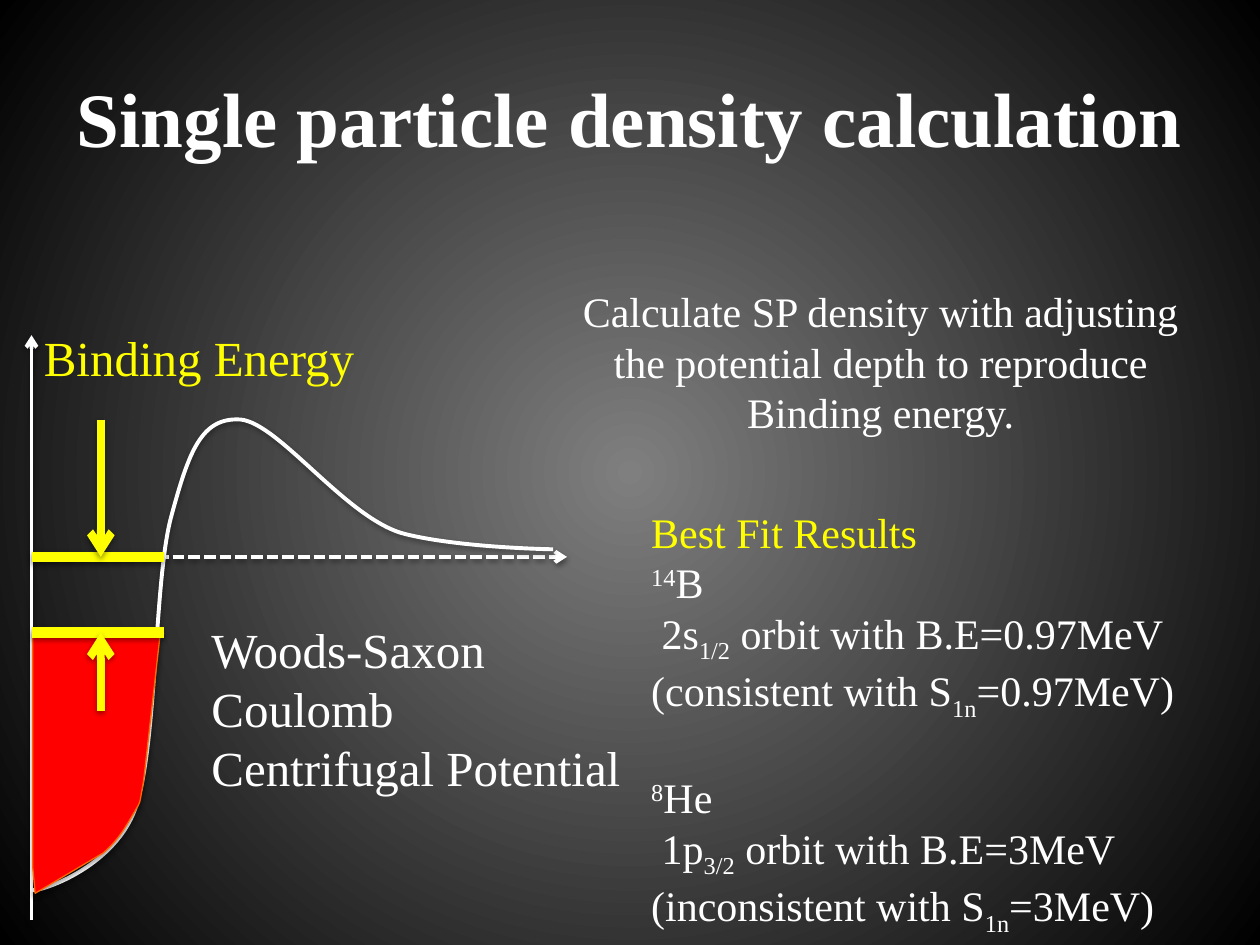
from dataclasses import dataclass

from lxml import etree
from pptx import Presentation
from pptx.dml.color import RGBColor
from pptx.enum.dml import MSO_LINE_DASH_STYLE as Dash
from pptx.enum.shapes import MSO_CONNECTOR as Connector
from pptx.enum.text import MSO_ANCHOR as Anchor, PP_ALIGN as Align
from pptx.oxml import parse_xml
from pptx.oxml.ns import nsdecls, qn
from pptx.util import Inches, Pt

COLORS = {"white": "FFFFFF", "yellow": "FFFF00", "red": "FF0000",
          "orange": "FF6600", "black": "000000", "gray": "7F7F7F"}
FONT = "Times New Roman"
SUPER, SUB = 30, -25
AXIS_X, ZERO_Y, LEVEL_Y, WELL_EDGE, ARROW_X = 0.25, 4.42, 5.02, 1.3, 0.8
Point = tuple[float, float]
Segment = tuple[Point, ...]  # one point: straight; three points: cubic curve


@dataclass
class Stroke:
    start: Point
    end: Point
    color: str
    width: float
    arrow: bool = False
    dashed: bool = False


@dataclass
class Outline:
    start: Point
    segments: list[Segment]
    color: str
    width: float
    fill: str = ""


@dataclass
class Line:
    runs: list[tuple[str, int]]  # text and baseline shift in percent
    color: str = "white"
    space_before: float = 0


@dataclass
class Label:
    box: tuple[float, float, float, float]
    lines: list[Line]
    size: float
    align: Align = Align.LEFT
    bold: bool = False
    anchor: Anchor = Anchor.TOP


def rgb(name: str) -> RGBColor:
    return RGBColor.from_string(COLORS[name])


def plain(*texts: str, color: str = "white") -> list[Line]:
    return [Line([(text, 0)], color) for text in texts]


def set_background(slide) -> None:
    """Radial gradient, light in the middle."""
    fill = slide.background.fill
    fill.gradient()
    for stop, name in zip(fill.gradient_stops, ("gray", "black")):
        stop.color.rgb = rgb(name)
    gradient = slide.background._cSld.find(".//" + qn("a:gradFill"))
    gradient.replace(gradient.find(qn("a:lin")), parse_xml(
        f'<a:path {nsdecls("a")} path="circle">'
        '<a:fillToRect l="50000" t="50000" r="50000" b="50000"/></a:path>'))


def add_shadow(shape, alpha: int = 38, distance: float = 1.6) -> None:
    shape._element.spPr.append(parse_xml(
        f'<a:effectLst {nsdecls("a")}><a:outerShdw blurRad="{Pt(3.1)}" '
        f'dist="{Pt(distance)}" dir="5400000" rotWithShape="0">'
        f'<a:srgbClr val="{COLORS["black"]}"><a:alpha val="{alpha * 1000}"/>'
        '</a:srgbClr></a:outerShdw></a:effectLst>'))


def add_stroke(slide, stroke: Stroke) -> None:
    ends = [Inches(value) for value in (*stroke.start, *stroke.end)]
    connector = slide.shapes.add_connector(Connector.STRAIGHT, *ends)
    line = connector.line
    line.color.rgb = rgb(stroke.color)
    line.width = Pt(stroke.width)
    if stroke.dashed:
        line.dash_style = Dash.SQUARE_DOT
    if stroke.arrow:
        etree.SubElement(line._get_or_add_ln(), qn("a:tailEnd"), type="arrow")
    add_shadow(connector)


def bend_segments(shape, segments: list[Segment]) -> None:
    """Turn the straight segments that have control points into curves."""
    straight = list(shape._element.iter(qn("a:lnTo")))
    for element, segment in zip(straight, segments):
        if len(segment) == 3:
            element.tag = qn("a:cubicBezTo")
            for position, (x, y) in enumerate(segment[:2]):
                control = etree.Element(qn("a:pt"),
                                        x=str(Inches(x) - shape.left),
                                        y=str(Inches(y) - shape.top))
                element.insert(position, control)


def add_outline(slide, outline: Outline):
    x, y = outline.start
    builder = slide.shapes.build_freeform(Inches(x), Inches(y))
    builder.add_line_segments(
        [(Inches(x), Inches(y)) for *_, (x, y) in outline.segments],
        close=bool(outline.fill))
    shape = builder.convert_to_shape()
    bend_segments(shape, outline.segments)
    if outline.fill:
        shape.fill.solid()
        shape.fill.fore_color.rgb = rgb(outline.fill)
    else:
        shape.fill.background()
    shape.line.color.rgb = rgb(outline.color)
    shape.line.width = Pt(outline.width)
    return shape


def add_label(slide, label: Label) -> None:
    shape = slide.shapes.add_textbox(*(Inches(value) for value in label.box))
    frame = shape.text_frame
    frame.word_wrap = False
    frame.vertical_anchor = label.anchor
    for index, line in enumerate(label.lines):
        paragraph = frame.add_paragraph() if index else frame.paragraphs[0]
        paragraph.alignment = label.align
        paragraph.space_before = Pt(line.space_before)
        for text, baseline in line.runs:
            run = paragraph.add_run()
            run.text = text
            run.font.name = FONT
            run.font.size = Pt(label.size)
            run.font.bold = label.bold
            run.font.color.rgb = rgb(line.color)
            if baseline:
                run.font._element.set("baseline", str(baseline * 1000))


def nucleus(mass: str, symbol: str, shell: str, spin: str, energy: str,
            verdict: str, gap: float = 0) -> list[Line]:
    return [
        Line([(mass, SUPER), (symbol, 0)], space_before=gap),
        Line([(f" {shell}", 0), (spin, SUB), (f" orbit with B.E={energy}", 0)]),
        Line([(f"({verdict} with S", 0), ("1n", SUB), (f"={energy})", 0)]),
    ]


AXES = [
    Stroke((AXIS_X, ZERO_Y), (4.5, ZERO_Y), "white", 2.25, arrow=True, dashed=True),
    Stroke((AXIS_X, 7.3), (AXIS_X, 2.66), "white", 2.25, arrow=True),
]
LEVELS = [Stroke((AXIS_X, y), (WELL_EDGE, y), "yellow", 6)
          for y in (LEVEL_Y, ZERO_Y)]
ENERGY_ARROWS = [Stroke((ARROW_X, start), (ARROW_X, end), "yellow", 4.5, arrow=True)
                 for start, end in ((5.64, LEVEL_Y), (3.33, ZERO_Y))]

POTENTIAL = Outline((0.26, 7.06), [
    ((0.23, 7.1), (0.88, 6.93), (1.07, 6.43)),
    ((1.25, 5.94), (1.22, 4.61), (1.36, 4.1)),
    ((1.5, 3.58), (1.6, 3.31), (1.91, 3.33)),
    ((2.22, 3.36), (2.76, 4.13), (3.22, 4.24)),
    ((3.67, 4.35), (4.39, 4.36), (4.39, 4.36))], "white", 2.25)
WELL = Outline((0.82, 6.77), [
    ((0.28, 7.09),), ((0.26, 6.88),), ((0.26, 5.03),),
    ((1.3, 5.03),), ((1.27, 5.05),), ((1.14, 6.2),),
    ((1.1, 6.42), (1.12, 6.35), (1.07, 6.44)),
    ((1.01, 6.54), (0.95, 6.66), (0.82, 6.77))], "orange", 0.75, fill="red")

TITLE = Label((0.5, 0.3, 9, 1.25), plain("Single particle density calculation"),
              44, Align.CENTER, bold=True, anchor=Anchor.MIDDLE)
BINDING = Label((0.25, 2.55, 2.69, 0.57),
                plain("Binding Energy", color="yellow"), 28)
TERMS = Label((1.58, 4.87, 3.48, 1.51),
              plain("Woods-Saxon", "Coulomb", "Centrifugal Potential"), 28)
METHOD = Label((4.5, 2.22, 4.98, 1.31),
               plain("Calculate SP density with adjusting",
                     "the potential depth to reproduce", "Binding energy."),
               24, Align.CENTER)
RESULTS = Label((5.07, 3.97, 4.42, 3.33),
                plain("Best Fit Results", color="yellow")
                + nucleus("14", "B", "2s", "1/2", "0.97MeV", "consistent")
                + nucleus("8", "He", "1p", "3/2", "3MeV", "inconsistent", gap=28.5),
                24)


def main() -> None:
    presentation = Presentation()
    presentation.slide_width, presentation.slide_height = Inches(10), Inches(7.5)
    slide = presentation.slides.add_slide(presentation.slide_layouts[6])
    set_background(slide)
    add_label(slide, TITLE)
    # Potential diagram
    for axis in AXES:
        add_stroke(slide, axis)
    add_label(slide, BINDING)
    add_shadow(add_outline(slide, POTENTIAL))
    add_shadow(add_outline(slide, WELL), 35, 1.8)
    for stroke in LEVELS + ENERGY_ARROWS:
        add_stroke(slide, stroke)
    # Explanations and results
    for label in (TERMS, METHOD, RESULTS):
        add_label(slide, label)
    presentation.save("out.pptx")


if __name__ == "__main__":
    main()
